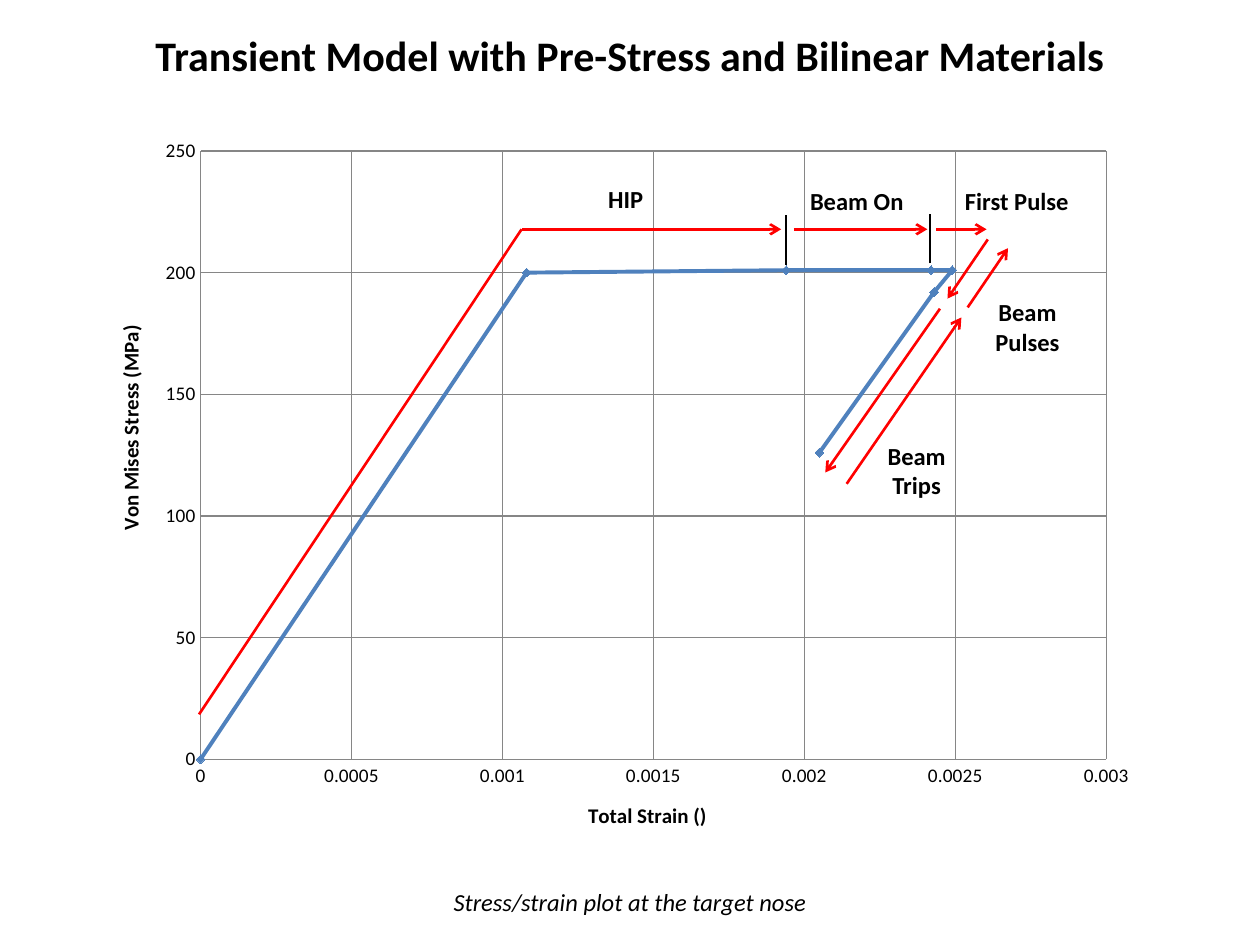
from dataclasses import dataclass

from lxml.etree import SubElement
from pptx import Presentation
from pptx.chart.data import XyChartData
from pptx.dml.color import RGBColor
from pptx.enum.chart import XL_CHART_TYPE as ChartType
from pptx.enum.chart import XL_MARKER_STYLE as Marker
from pptx.enum.chart import XL_TICK_MARK as TickMark
from pptx.enum.shapes import MSO_CONNECTOR as Connector
from pptx.enum.text import MSO_ANCHOR as Anchor
from pptx.enum.text import PP_ALIGN as Align
from pptx.oxml import parse_xml
from pptx.oxml.ns import nsdecls, qn
from pptx.util import Inches, Pt


@dataclass(frozen=True)
class Theme:
    font: str = "Calibri"
    text: RGBColor = RGBColor(0, 0, 0)
    curve: RGBColor = RGBColor(0x4F, 0x81, 0xBD)
    path_line: RGBColor = RGBColor(0xFF, 0, 0)
    grid: RGBColor = RGBColor(0x86, 0x86, 0x86)
    heading: Pt = Pt(24)
    label: Pt = Pt(14)
    axis_title: Pt = Pt(12)
    tick_label: Pt = Pt(11)


theme = Theme()
prs = Presentation()
prs.slide_width, prs.slide_height = Inches(10), Inches(7.5)
slide = prs.slides.add_slide(prs.slide_layouts[6])


def style_font(font, size, bold=False, italic=False):
    font.name, font.size = theme.font, size
    font.bold, font.italic = bold, italic
    font.color.rgb = theme.text


def set_layout(parent, index, **fractions):
    """Fix a chart part's position, as fractions of the chart area."""
    for old in parent.findall(qn("c:layout")):
        parent.remove(old)
    layout = parse_xml(f"<c:layout {nsdecls('c')}><c:manualLayout/></c:layout>")
    for tag, value in fractions.items():
        SubElement(layout[0], qn(f"c:{tag}")).set("val", str(value))
    parent.insert(index, layout)


# Stress/strain curve
strain = [0, 0.00108, 0.00194, 0.00242, 0.00249, 0.00243, 0.00249, 0.00243, 0.00205]
stress = [0, 200, 201, 201, 201, 192, 201, 192, 126]
chart_data = XyChartData()
points = chart_data.add_series("Series 1")
for x, y in zip(strain, stress):
    points.add_data_point(x, y)
chart = slide.shapes.add_chart(
    ChartType.XY_SCATTER_LINES, Inches(0.81), Inches(1.06), Inches(8.32), Inches(5.57),
    chart_data).chart
chart.has_legend = chart.has_title = False
style_font(chart.font, theme.tick_label)
plot = chart.plots[0]
plot.vary_by_categories = False
curve = plot.series[0]
curve.smooth = False
curve.format.line.color.rgb = theme.curve
curve.format.line.width = Pt(2.25)
curve.marker.style, curve.marker.size = Marker.DIAMOND, 5
curve.marker.format.fill.solid()
curve.marker.format.fill.fore_color.rgb = theme.curve
curve.marker.format.line.color.rgb = theme.curve

strain_axis, stress_axis = chart.category_axis, chart.value_axis
for axis, title, highest, step, x, y in [
    (strain_axis, "Total Strain ()", 0.003, 0.0005, 0.46, 0.95),
    (stress_axis, "Von Mises Stress (MPa)", 250, 50, 0.01, 0.27),
]:
    axis.minimum_scale, axis.maximum_scale, axis.major_unit = 0, highest, step
    axis.major_tick_mark = axis.minor_tick_mark = TickMark.NONE
    axis.has_major_gridlines = True
    for line in (axis.format.line, axis.major_gridlines.format.line):
        line.color.rgb = theme.grid
        line.width = Pt(0.75)
    axis.tick_labels.number_format = "General"
    axis.tick_labels.number_format_is_linked = False
    style_font(axis.tick_labels.font, theme.tick_label)
    heading = axis.axis_title.text_frame
    heading.text = title
    style_font(heading.paragraphs[0].font, theme.axis_title, bold=True)
    set_layout(axis.axis_title._element, 1, xMode="edge", yMode="edge", x=x, y=y)
plot_area = chart._chartSpace.chart.plotArea
set_layout(plot_area, 0, layoutTarget="inner", xMode="edge", yMode="edge",
           x=0.094, y=0.025, w=0.864, h=0.87)

# Phase dividers and load path
DIVIDER = (theme.text, 1.25, False)
PATH = (theme.path_line, 1.5, False)
ARROW = (theme.path_line, 1.5, True)
path_y = 1.82
for x1, y1, x2, y2, (color, width, has_arrow) in [
    (6.24, 2.1, 6.24, 1.71, DIVIDER),
    (7.38, 2.09, 7.38, 1.7, DIVIDER),
    (1.58, 5.67, 4.14, path_y, PATH),
    (4.14, path_y, 6.2, path_y, ARROW),
    (6.3, path_y, 7.36, path_y, ARROW),
    (7.43, path_y, 7.83, path_y, ARROW),
    (7.84, 1.9, 7.52, 2.37, ARROW),
    (7.68, 2.44, 8, 1.97, ARROW),
    (7.46, 2.45, 6.55, 3.75, ARROW),
    (6.72, 3.84, 7.63, 2.52, ARROW),
]:
    segment = slide.shapes.add_connector(
        Connector.STRAIGHT, Inches(x1), Inches(y1), Inches(x2), Inches(y2))
    segment.line.color.rgb = color
    segment.line.width = Pt(width)
    if has_arrow:
        SubElement(segment.line._get_or_add_ln(), qn("a:tailEnd")).set("type", "arrow")
    SubElement(segment._element.spPr, qn("a:effectLst"))

# Heading, caption and phase labels
HEADING = (theme.heading, True, False)
CAPTION = (theme.label, False, True)
PHASE = (theme.label, True, False)
for text, left, top, width, height, look in [
    ("Transient Model with Pre-Stress and Bilinear Materials", 0.5, 0.17, 9, 0.53, HEADING),
    ("Stress/strain plot at the target nose", 0.87, 6.99, 8.26, 0.34, CAPTION),
    ("HIP", 4.14, 1.41, 1.65, 0.31, PHASE),
    ("Beam On", 6.24, 1.43, 1.12, 0.31, PHASE),
    ("First Pulse", 7.43, 1.43, 1.28, 0.31, PHASE),
    ("Beam Pulses", 7.68, 2.31, 0.95, 0.52, PHASE),
    ("Beam Trips", 6.8, 3.45, 0.95, 0.52, PHASE),
]:
    frame = slide.shapes.add_textbox(
        Inches(left), Inches(top), Inches(width), Inches(height)).text_frame
    frame.word_wrap = True
    frame.vertical_anchor = Anchor.MIDDLE if look is HEADING else Anchor.TOP
    frame.text = text
    paragraph = frame.paragraphs[0]
    paragraph.alignment = Align.CENTER
    style_font(paragraph.font, *look)

prs.save("out.pptx")
